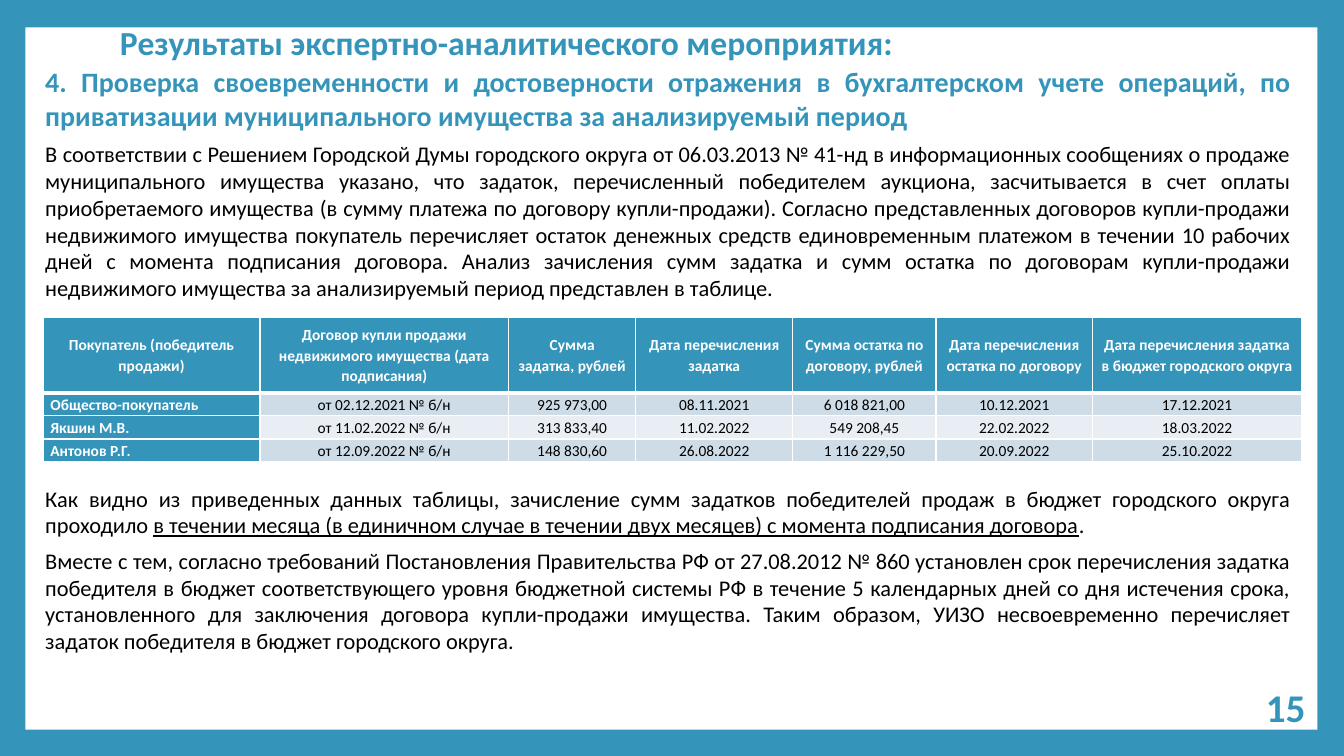
"""Build the slide on entering privatization operations in the accounts."""
from lxml.etree import SubElement
from pptx import Presentation
from pptx.dml.color import RGBColor as RGB
from pptx.enum.shapes import MSO_SHAPE as SHAPE
from pptx.enum.text import MSO_ANCHOR as ANCHOR, MSO_AUTO_SIZE as AUTO, PP_ALIGN as ALIGN
from pptx.oxml.ns import qn
from pptx.util import Cm, Pt

COLORS = {"blue": "3494BA", "white": "FFFFFF", "black": "000000",
          "odd": "CEDCE7", "even": "E8EEF3"}
FONT = "Calibri"
TITLE = "Результаты экспертно-аналитического мероприятия:"
NUMBER = "15"
HEADING = {"size": Pt(20), "bold": True, "color": "blue"}
TEXT = {"size": Pt(16), "bold": False, "color": "black"}
UNDERLINED = {**TEXT, "underline": True}
BODY = [
    (0, [("4. Проверка своевременности и достоверности отражения в бухгалтерском учете операций, по приватизации муниципального имущества за анализируемый период", HEADING)]),
    (6, [("В соответствии с Решением Городской Думы городского округа от 06.03.2013 № 41-нд в информационных сообщениях о продаже муниципального имущества указано, что задаток, перечисленный победителем аукциона, засчитывается в счет оплаты приобретаемого имущества (в сумму платежа по договору купли-продажи). Согласно представленных договоров купли-продажи недвижимого имущества покупатель перечисляет остаток денежных средств единовременным платежом в течении 10 рабочих дней с момента подписания договора. Анализ зачисления сумм задатка и сумм остатка по договорам купли-продажи недвижимого имущества за анализируемый период представлен в таблице.", TEXT)]),
    (131, [("Как видно из приведенных данных таблицы, зачисление сумм задатков победителей продаж в бюджет городского округа проходило ", TEXT),
           ("в течении месяца (в единичном случае в течении двух месяцев) с момента подписания договора", UNDERLINED),
           (".", TEXT)]),
    (6, [("Вместе с тем, согласно требований Постановления Правительства РФ от 27.08.2012 № 860 установлен срок перечисления задатка победителя в бюджет соответствующего уровня бюджетной системы РФ в течение 5 календарных дней со дня истечения срока, установленного для заключения договора купли-продажи имущества. Таким образом, УИЗО несвоевременно перечисляет задаток победителя в бюджет городского округа.", TEXT)]),
]
ROWS = [
    ("Покупатель (победитель продажи)", "Договор купли продажи недвижимого имущества (дата подписания)",
     "Сумма\nзадатка, рублей", "Дата перечисления задатка", "Сумма остатка по договору, рублей",
     "Дата перечисления остатка по договору", "Дата перечисления задатка в бюджет городского округа"),
    ("Общество-покупатель", "от 02.12.2021 № б/н", "925 973,00", "08.11.2021", "6 018 821,00", "10.12.2021", "17.12.2021"),
    ("Якшин М.В.", "от 11.02.2022 № б/н", "313 833,40", "11.02.2022", "549 208,45", "22.02.2022", "18.03.2022"),
    ("Антонов Р.Г.", "от 12.09.2022 № б/н", "148 830,60", "26.08.2022", "1 116 229,50", "20.09.2022", "25.10.2022"),
]
COL_WIDTHS = [5.46, 6.27, 3.2, 3.96, 3.61, 3.94, 5.28]
ROW_HEIGHTS = [1.9, 0.58, 0.58, 0.58]


def rgb(name):
    return RGB.from_string(COLORS[name])


def set_attrs(obj, values):
    for name, value in values.items():
        setattr(obj, name, value)


def style(font, values):
    font.name = FONT
    for name, value in values.items():
        if name == "color":
            font.color.rgb = rgb(value)
        else:
            setattr(font, name, value)


def place(sp, *box):
    set_attrs(sp, dict(zip(("left", "top", "width", "height"), map(Cm, box))))


def add_text(s, *box):
    tf = s.shapes.add_textbox(*map(Cm, box)).text_frame
    tf.word_wrap = True
    return tf


def add_border(cell, side, width):
    ln = SubElement(cell._tc.get_or_add_tcPr(), qn(f"a:ln{side}"), w=str(Pt(width)))
    fill = SubElement(ln, qn("a:solidFill"))
    SubElement(fill, qn("a:srgbClr"), val=COLORS["white"])


def add_title(s):
    title = s.shapes.title
    place(title, 2.77, 0.46, 30.02, 1.32)
    tf = title.text_frame
    tf.text = TITLE
    set_attrs(tf, {"auto_size": AUTO.NONE, "word_wrap": True, "vertical_anchor": ANCHOR.MIDDLE})
    p = tf.paragraphs[0]
    set_attrs(p, {"alignment": ALIGN.LEFT, "line_spacing": 0.9})
    style(p.runs[0].font, {"size": Pt(24), "bold": True, "color": "blue"})


def add_panel(s):
    panel = s.shapes.add_shape(SHAPE.RECTANGLE, Cm(0.64), Cm(0.69), Cm(32.56), Cm(17.7))
    panel.shadow.inherit = False
    panel.fill.solid()
    panel.fill.fore_color.rgb = rgb("white")
    panel.line.fill.background()
    s.shapes.title._element.addprevious(panel._element)


def add_number(s):
    tf = add_text(s, 25.91, 17.3, 7.24, 1.02)
    tf.vertical_anchor = ANCHOR.MIDDLE
    p = tf.paragraphs[0]
    p.alignment = ALIGN.RIGHT
    r = p.add_run()
    r.text = NUMBER
    style(r.font, {"size": Pt(28), "bold": True, "color": "blue"})


def add_body(s):
    tf = add_text(s, 0.76, 1.5, 32.03, 16.38)
    for i, (before, runs) in enumerate(BODY):
        p = tf.add_paragraph() if i else tf.paragraphs[0]
        p._p.get_or_add_pPr().set("marL", str(Cm(0.13)))
        set_attrs(p, {"alignment": ALIGN.JUSTIFY, "space_before": Pt(before)})
        for text, values in runs:
            r = p.add_run()
            r.text = text
            style(r.font, values)


def fill_cell(cell, text, row, col):
    accent = row == 0 or col == 0
    set_attrs(cell, {"text": text, "vertical_anchor": ANCHOR.MIDDLE,
                     "margin_left": Cm(0.18), "margin_right": Cm(0.18),
                     "margin_top": 0, "margin_bottom": 0})
    widths = {"L": 1, "R": 1, "T": 3 if row == 1 else 1, "B": 1 if row else 3}
    for side, width in widths.items():
        add_border(cell, side, width)
    cell.fill.solid()
    cell.fill.fore_color.rgb = rgb("blue" if accent else "odd" if row % 2 else "even")
    for p in cell.text_frame.paragraphs:
        set_attrs(p, {"alignment": ALIGN.LEFT if row and not col else ALIGN.CENTER,
                      "line_spacing": 1.07})
        style(p.runs[0].font, {"size": Pt(11), "bold": accent,
                               "color": "white" if accent else "black"})


def add_payments(s):
    table = s.shapes.add_table(len(ROWS), len(COL_WIDTHS), Cm(1.09), Cm(8),
                               Cm(sum(COL_WIDTHS)), Cm(sum(ROW_HEIGHTS))).table
    for column, width in zip(table.columns, COL_WIDTHS):
        column.width = Cm(width)
    for line, height in zip(table.rows, ROW_HEIGHTS):
        line.height = Cm(height)
    for row, texts in enumerate(ROWS):
        for col, text in enumerate(texts):
            fill_cell(table.cell(row, col), text, row, col)


def main():
    prs = Presentation()
    set_attrs(prs, {"slide_width": Cm(33.87), "slide_height": Cm(19.05)})
    s = prs.slides.add_slide(prs.slide_layouts[5])
    s.background.fill.solid()
    s.background.fill.fore_color.rgb = rgb("blue")
    for build in (add_title, add_panel, add_number, add_body, add_payments):
        build(s)
    prs.save("out.pptx")


if __name__ == "__main__":
    main()
